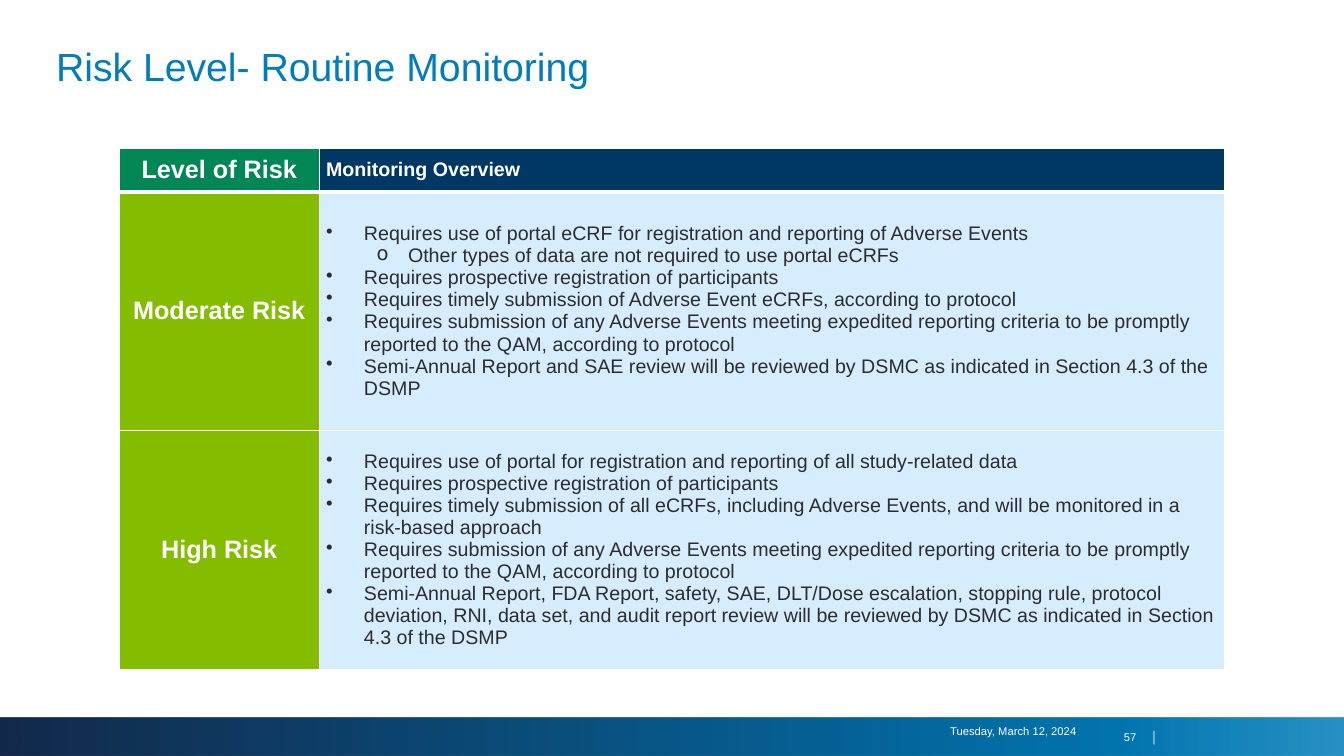
import lxml.etree
import pptx
import pptx.dml.color
import pptx.enum.shapes
import pptx.enum.text
import pptx.oxml
import pptx.oxml.ns
import pptx.util

Pt = pptx.util.Pt
RGBColor = pptx.dml.color.RGBColor
Align = pptx.enum.text.PP_ALIGN
Anchor = pptx.enum.text.MSO_ANCHOR
qn = pptx.oxml.ns.qn

WHITE = RGBColor(0xFF, 0xFF, 0xFF)
BLUE = RGBColor(0x00, 0x7D, 0xBA)
MID_BLUE = RGBColor(0x02, 0x75, 0xAF)
DARK_BLUE = RGBColor(0x13, 0x29, 0x4B)
NAVY = RGBColor(0x00, 0x38, 0x65)
GREEN = RGBColor(0x00, 0x87, 0x55)
LIME = RGBColor(0x84, 0xBD, 0x00)
PALE_BLUE = RGBColor(0xD6, 0xED, 0xFF)
INK = RGBColor(0x2C, 0x2C, 0x2D)

TITLE = {"size": Pt(28), "color": BLUE}
FOOTER = {"size": Pt(8), "color": WHITE}
LEVEL = {"size": Pt(18), "bold": True, "color": WHITE}
HEADING = {"size": Pt(14), "bold": True, "color": WHITE}
BODY = {"size": Pt(14), "bold": False, "color": INK}

# Bullet character, left margin and hanging indent for each level
BULLETS = [("•", Pt(27), Pt(-27)), ("o", Pt(58.5), Pt(-22.5))]

# Each risk level with its (bullet level, text) requirements
RISKS = [
    ("Moderate Risk", [
        (0, "Requires use of portal eCRF for registration and reporting of Adverse Events"),
        (1, "Other types of data are not required to use portal eCRFs"),
        (0, "Requires prospective registration of participants"),
        (0, "Requires timely submission of Adverse Event eCRFs, according to protocol"),
        (0, "Requires submission of any Adverse Events meeting expedited reporting "
            "criteria to be promptly reported to the QAM, according to protocol"),
        (0, "Semi-Annual Report and SAE review will be reviewed by DSMC as indicated "
            "in Section 4.3 of the DSMP"),
    ]),
    ("High Risk", [
        (0, "Requires use of portal for registration and reporting of all study-related data"),
        (0, "Requires prospective registration of participants"),
        (0, "Requires timely submission of all eCRFs, including Adverse Events, and will "
            "be monitored in a risk-based approach"),
        (0, "Requires submission of any Adverse Events meeting expedited reporting "
            "criteria to be promptly reported to the QAM, according to protocol"),
        (0, "Semi-Annual Report, FDA Report, safety, SAE, DLT/Dose escalation, stopping "
            "rule, protocol deviation, RNI, data set, and audit report review will be "
            "reviewed by DSMC as indicated in Section 4.3 of the DSMP"),
    ]),
]


def add_text(paragraph, text, style, alignment=Align.LEFT):
    paragraph.alignment = alignment
    run = paragraph.add_run()
    run.text = text
    run.font.name = "Arial"
    for name, value in style.items():
        if name == "color":
            run.font.color.rgb = value
        else:
            setattr(run.font, name, value)


def add_text_box(slide, box, text, style, alignment=Align.LEFT, **margins):
    frame = slide.shapes.add_textbox(*map(Pt, box)).text_frame
    frame.word_wrap = True
    frame.vertical_anchor = Anchor.MIDDLE
    for name, value in margins.items():
        setattr(frame, name, Pt(value))
    paragraph = frame.paragraphs[0]
    add_text(paragraph, text, style, alignment)
    return paragraph


def add_tab_stop(paragraph, position):
    properties = paragraph._p.get_or_add_pPr()
    tabs = lxml.etree.SubElement(properties, qn("a:tabLst"))
    lxml.etree.SubElement(tabs, qn("a:tab"), pos=str(position), algn="l")


def add_bullet(paragraph, level):
    character, margin, indent = BULLETS[level]
    paragraph.level = level
    properties = paragraph._p.get_or_add_pPr()
    properties.set("marL", str(margin))
    properties.set("indent", str(indent))
    lxml.etree.SubElement(properties, qn("a:buChar"), char=character)


def add_gradient_bar(slide, box, stops):
    bar = slide.shapes.add_shape(pptx.enum.shapes.MSO_SHAPE.RECTANGLE, *map(Pt, box))
    bar.shadow.inherit = False
    bar.line.fill.background()
    bar.fill.gradient()
    bar.fill.gradient_angle = 0
    stop_list = bar._element.spPr.find(".//" + qn("a:gsLst"))
    for stop in list(stop_list):
        stop_list.remove(stop)
    for position, color, opacity in stops:
        stop = lxml.etree.SubElement(stop_list, qn("a:gs"), pos=str(position * 1000))
        fill = lxml.etree.SubElement(stop, qn("a:srgbClr"), val=str(color))
        lxml.etree.SubElement(fill, qn("a:alpha"), val=str(opacity * 1000))


def format_cell(cell, color, bottom_width):
    cell.vertical_anchor = Anchor.MIDDLE
    cell.margin_left = cell.margin_right = Pt(5)
    cell.margin_top = cell.margin_bottom = 0
    # Borders come before the fill in the cell properties
    properties = cell._tc.get_or_add_tcPr()
    widths = {"a:lnL": 1, "a:lnR": 1, "a:lnT": 1, "a:lnB": bottom_width}
    for tag, width in widths.items():
        line = lxml.etree.SubElement(properties, qn(tag), w=str(Pt(width)))
        fill = lxml.etree.SubElement(line, qn("a:solidFill"))
        lxml.etree.SubElement(fill, qn("a:srgbClr"), val=str(WHITE))
    cell.fill.solid()
    cell.fill.fore_color.rgb = color


def add_risk_table(slide):
    widths, heights = [142.75, 647], [31, 170.6, 170.6]
    table = slide.shapes.add_table(
        len(heights), len(widths), Pt(85.25), Pt(106),
        Pt(sum(widths)), Pt(sum(heights))).table
    table.first_row = table.horz_banding = False
    for column, width in zip(table.columns, widths):
        column.width = Pt(width)
    for row, height in zip(table.rows, heights):
        row.height = Pt(height)

    # Heading row
    level_heading, overview_heading = table.cell(0, 0), table.cell(0, 1)
    format_cell(level_heading, GREEN, 3)
    format_cell(overview_heading, NAVY, 3)
    add_text(level_heading.text_frame.paragraphs[0], "Level of Risk", LEVEL, Align.CENTER)
    add_text(overview_heading.text_frame.paragraphs[0], "Monitoring Overview", HEADING)

    # One row for each risk level
    for row, (risk, requirements) in enumerate(RISKS, start=1):
        risk_cell, overview = table.cell(row, 0), table.cell(row, 1)
        format_cell(risk_cell, LIME, 1)
        format_cell(overview, PALE_BLUE, 1)
        add_text(risk_cell.text_frame.paragraphs[0], risk, LEVEL, Align.CENTER)
        frame = overview.text_frame
        for index, (level, text) in enumerate(requirements):
            paragraph = frame.add_paragraph() if index else frame.paragraphs[0]
            add_bullet(paragraph, level)
            add_text(paragraph, text, BODY)


def main():
    presentation = pptx.Presentation()
    presentation.slide_width, presentation.slide_height = Pt(960), Pt(540)
    slide = presentation.slides.add_slide(presentation.slide_layouts[6])

    # Footer band
    add_gradient_bar(slide, (0, 512.75, 960, 27.25),
                     [(0, DARK_BLUE, 100), (83, MID_BLUE, 100), (100, BLUE, 84)])

    # Title
    title = add_text_box(slide, (33, 30, 894, 39), "Risk Level- Routine Monitoring", TITLE)
    title.line_spacing = 0.9

    # Date and slide number
    add_text_box(slide, (661, 518.5, 115, 16.5), "Tuesday, March 12, 2024", FOOTER,
                 Align.RIGHT, margin_top=0, margin_bottom=9.2)
    number = add_text_box(slide, (787, 518.5, 48, 16.5), "57\t│", FOOTER,
                          margin_left=15.7, margin_right=0)
    add_tab_stop(number, Pt(19.6))

    add_risk_table(slide)
    presentation.save("out.pptx")


if __name__ == "__main__":
    main()
